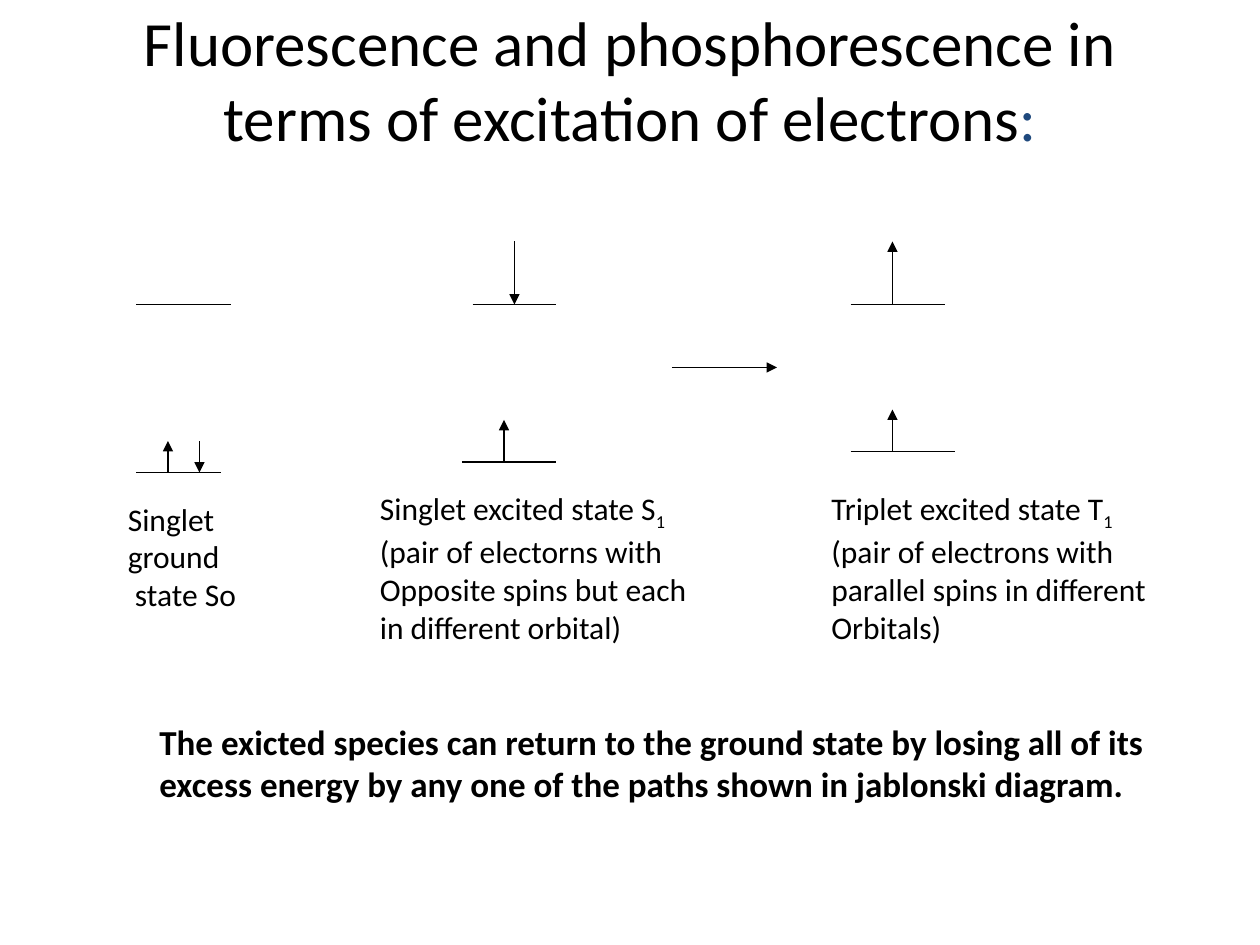
import dataclasses

import pptx
import pptx.dml.color
import pptx.enum.shapes
import pptx.enum.text
import pptx.oxml.ns
import pptx.util
from lxml import etree

PX = 914400 // 120  # 120 px to the inch
BLACK = pptx.dml.color.RGBColor(0x00, 0x00, 0x00)
NAVY = pptx.dml.color.RGBColor(0x1F, 0x49, 0x7D)
FONT = "Calibri"


@dataclasses.dataclass
class Level:
    """A line from start to end at height y, with electrons as (x, length, spin)."""
    start: int
    end: int
    y: int
    electrons: tuple = ()


@dataclasses.dataclass
class State:
    """Box in px, energy levels relative to it, and the caption below them."""
    box: tuple
    levels: tuple
    caption_top: int
    caption: tuple
    subscript: str = ""


STATES = (
    State((110, 230, 130, 361),
          (Level(20, 110, 60),
           Level(20, 100, 220, ((50, 30, "up"), (80, 30, "down")))),
          240, ("Singlet ground\v state So",)),
    State((350, 230, 320, 424),
          (Level(100, 180, 60, ((140, 60, "down"),)),
           Level(90, 180, 210, ((130, 40, "up"),))),
          230, ("Singlet excited state S", "(pair of electorns with",
                "Opposite spins but each", "in different orbital)"), "1"),
    State((780, 230, 340, 424),
          (Level(30, 120, 60, ((70, 60, "up"),)),
           Level(30, 130, 200, ((70, 40, "up"),))),
          230, ("Triplet excited state T", "(pair of electrons with",
                "parallel spins in different", "Orbitals)"), "1"),
)


def px(*lengths):
    return [length * PX for length in lengths]


def style(font, size, bold=False):
    font.name, font.size, font.bold = FONT, pptx.util.Pt(size), bold
    font.color.rgb = BLACK


def add_line(page, start, end, arrow=False):
    line = page.shapes.add_connector(
        pptx.enum.shapes.MSO_CONNECTOR.STRAIGHT, *px(*start, *end))
    line.line.color.rgb = BLACK
    line.line.width = pptx.util.Pt(0.75)
    if arrow:
        etree.SubElement(line.line._get_or_add_ln(),
                         pptx.oxml.ns.qn("a:tailEnd"), type="triangle")
    etree.SubElement(line._element.spPr, pptx.oxml.ns.qn("a:effectLst"))


def add_text(page, box, lines, size, bold=False):
    """Add a wrapped text box with one paragraph a line; return its paragraphs."""
    frame = page.shapes.add_textbox(*px(*box)).text_frame
    frame.word_wrap = True
    frame.text = "\n".join(lines)
    for para in frame.paragraphs:
        style(para.font, size, bold)
    return frame.paragraphs


def add_title(page, box):
    title = page.shapes.title
    title.left, title.top, title.width, title.height = px(*box)
    frame = title.text_frame
    frame.auto_size = pptx.enum.text.MSO_AUTO_SIZE.NONE
    frame.vertical_anchor = pptx.enum.text.MSO_ANCHOR.MIDDLE
    frame.margin_bottom = 78 * PX  # lifts the text by half a line
    para = frame.paragraphs[0]
    para.alignment = pptx.enum.text.PP_ALIGN.CENTER
    style(para.font, 36)
    para.add_run().text = ("Fluorescence and phosphorescence in "
                           "terms of excitation of electrons")
    colon = para.add_run()
    colon.text = ":"
    colon.font.color.rgb = NAVY


def add_state(page, state):
    left, top, width, height = state.box
    for level in state.levels:
        y = top + level.y
        add_line(page, (left + level.start, y), (left + level.end, y))
        for x, length, spin in level.electrons:
            foot, head = (left + x, y), (left + x, y - length)
            if spin == "up":
                add_line(page, foot, head, arrow=True)
            else:
                add_line(page, head, foot, arrow=True)
    caption_box = (left, top + state.caption_top, width, height - state.caption_top)
    paras = add_text(page, caption_box, state.caption, 18)
    if state.subscript:
        span = paras[0].add_run()
        span.text = state.subscript
        span._r.get_or_add_rPr().set("baseline", "-25000")


def main():
    deck = pptx.Presentation()
    deck.slide_width, deck.slide_height = px(1200, 900)
    page = deck.slides.add_slide(deck.slide_layouts[5])
    add_title(page, (60, 36, 1080, 150))
    for state in STATES:
        add_state(page, state)
    add_line(page, (640, 350), (740, 350), arrow=True)
    add_text(page, (140, 680, 1000, 130),
             ("The exicted species can return to the ground state by losing all of its "
              "excess energy by any one of the paths shown in jablonski diagram.",),
             20, bold=True)
    deck.save("out.pptx")


if __name__ == "__main__":
    main()
